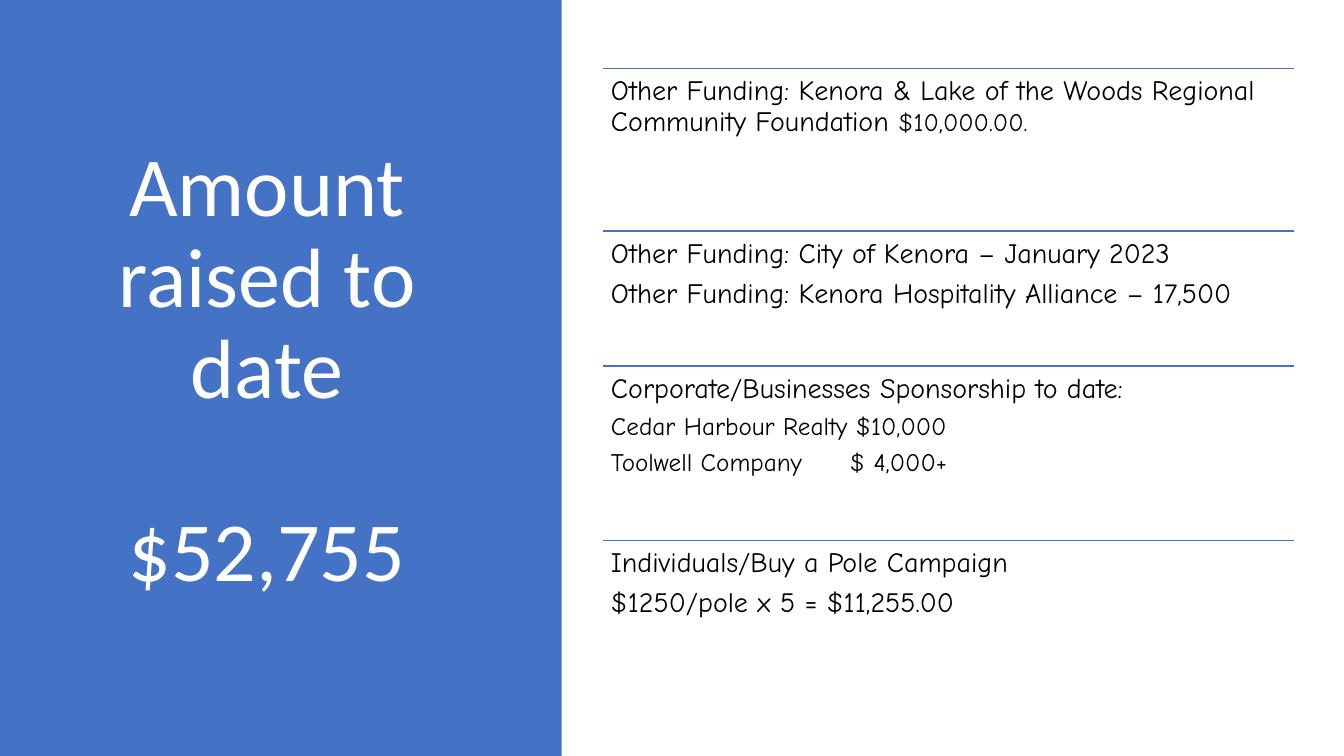
from dataclasses import dataclass

from pptx import Presentation
from pptx.dml.color import RGBColor
from pptx.enum.shapes import MSO_CONNECTOR as CONN, MSO_SHAPE as SHAPE
from pptx.enum.text import MSO_ANCHOR as ANCHOR, MSO_AUTO_SIZE as FIT, PP_ALIGN as ALIGN
from pptx.oxml.ns import qn
from pptx.slide import Slide
from pptx.util import Emu, Pt
from lxml.etree import SubElement

COLORS = {"panel": "4472C4", "title": "FFFFFF", "body": "000000"}
TITLE_FONT, BODY_FONT = "Calibri", "Comic Neue"
LEFT, WIDTH, INSET = 598, 685, 8
AMOUNT_TAB = 237
LINE_SPACING, AFTER_RATIO = 0.9, 0.35


@dataclass
class Run:
    text: str
    size: int = 20


@dataclass
class Section:
    top: int
    height: int
    paragraphs: list[list[Run]]


SECTIONS = [
    Section(68, 161, [[
        Run("Other Funding: Kenora & Lake of the Woods Regional Community Foundation "),
        Run("$10,000.00.", 18)]]),
    Section(229, 134, [
        [Run("Other Funding: City of Kenora – January 2023")],
        [Run("Other Funding: Kenora Hospitality Alliance – 17,500")]]),
    Section(363, 173, [
        [Run("Corporate/Businesses Sponsorship to date:")],
        [Run("Cedar Harbour Realty $10,000", 18)],
        [Run("Toolwell Company\t$ 4,000+", 18)]]),
    Section(536, 134, [
        [Run("Individuals/Buy a Pole Campaign")],
        [Run("$1250/pole x 5 = $11,255.00")]]),
]


def px(n: int) -> Emu:
    """One px is a hundredth of an inch."""
    return Emu(n * 9144)


def color(name: str) -> RGBColor:
    return RGBColor.from_string(COLORS[name])


def apply(target, formats: dict) -> None:
    for name, value in formats.items():
        setattr(target, name, value)


def add_run(p, text: str, font: str, size: int, tint: str) -> None:
    r = p.add_run()
    r.text = text
    apply(r.font, {"name": font, "size": Pt(size)})
    r.font.color.rgb = color(tint)


def add_panel(s: Slide) -> None:
    sp = s.shapes.add_shape(SHAPE.RECTANGLE, 0, 0, px(557), px(750))
    sp.shadow.inherit = False
    sp.fill.solid()
    sp.fill.fore_color.rgb = color("panel")
    sp.line.fill.background()
    # Keep the panel behind the title
    s.shapes._spTree.insert(2, sp._element)


def add_title(s: Slide) -> None:
    sp = s.shapes.title
    apply(sp, {"left": px(57), "top": px(68), "width": px(416), "height": px(602)})
    tf = sp.text_frame
    apply(tf, {"word_wrap": True, "auto_size": FIT.NONE, "vertical_anchor": ANCHOR.MIDDLE})
    for p, text, before in ((tf.paragraphs[0], "Amount raised to date", 0),
                            (tf.add_paragraph(), "$52,755", 66)):
        apply(p, {"alignment": ALIGN.CENTER, "line_spacing": LINE_SPACING,
                  "space_before": Pt(before)})
        add_run(p, text, TITLE_FONT, 60, "title")


def add_rule(s: Slide, y: int) -> None:
    line = s.shapes.add_connector(CONN.STRAIGHT, px(LEFT), px(y), px(LEFT + WIDTH), px(y))
    line.line.color.rgb = color("panel")
    line.line.width = Pt(1)
    SubElement(line._element.spPr, qn("a:effectLst"))


def add_section(s: Slide, section: Section) -> None:
    add_rule(s, section.top)
    sp = s.shapes.add_textbox(px(LEFT), px(section.top), px(WIDTH), px(section.height))
    tf = sp.text_frame
    sides = ("left", "top", "right", "bottom")
    apply(tf, {"word_wrap": True, "vertical_anchor": ANCHOR.TOP,
               **{f"margin_{side}": px(INSET) for side in sides}})
    for i, runs in enumerate(section.paragraphs):
        p = tf.add_paragraph() if i else tf.paragraphs[0]
        apply(p, {"alignment": ALIGN.LEFT, "line_spacing": LINE_SPACING,
                  "space_after": Pt(runs[0].size * AFTER_RATIO)})
        for run in runs:
            add_run(p, run.text, BODY_FONT, run.size, "body")
            if "\t" in run.text:
                tabs = SubElement(p._p.get_or_add_pPr(), qn("a:tabLst"))
                SubElement(tabs, qn("a:tab"), pos=str(px(AMOUNT_TAB)), algn="l")


def main() -> None:
    prs = Presentation()
    apply(prs, {"slide_width": px(1333), "slide_height": px(750)})
    s = prs.slides.add_slide(prs.slide_layouts[5])

    # Left panel with the total
    add_panel(s)
    add_title(s)

    # Funding sources
    for section in SECTIONS:
        add_section(s, section)

    prs.save("out.pptx")


if __name__ == "__main__":
    main()
